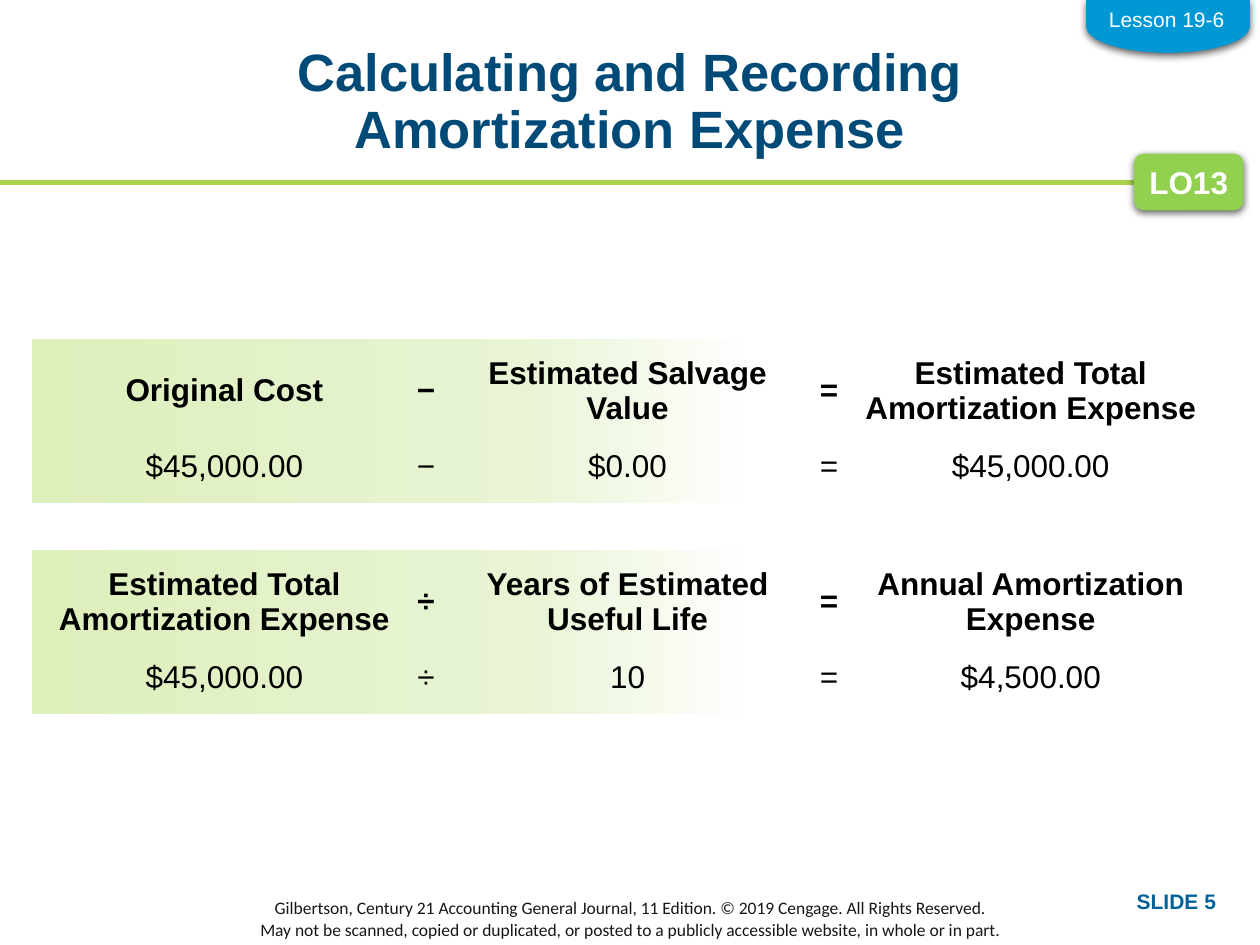
from lxml.etree import SubElement
from pptx import Presentation
from pptx.dml.color import RGBColor
from pptx.enum.shapes import MSO_CONNECTOR, MSO_SHAPE
from pptx.enum.text import MSO_ANCHOR, PP_ALIGN
from pptx.oxml.ns import qn
from pptx.util import Pt

NAVY = RGBColor(0x00, 0x4A, 0x78)
BLUE = RGBColor(0x00, 0x61, 0x98)
SKY = RGBColor(0x00, 0x98, 0xD4)
RULE_GREEN = RGBColor(0xAA, 0xD2, 0x4B)
BADGE_GREEN = RGBColor(0x92, 0xD0, 0x50)
BLACK = RGBColor(0x00, 0x00, 0x00)
INK = RGBColor(0x18, 0x17, 0x17)
WHITE = RGBColor(0xFF, 0xFF, 0xFF)
PANEL_STOPS = [
    (0, RGBColor(0xDD, 0xEF, 0xBB)),
    (50, RGBColor(0xE8, 0xF4, 0xD4)),
    (74, WHITE),
]

TITLE = "Calculating and Recording\vAmortization Expense"
LESSON = "Lesson 19-6"
OBJECTIVE = "LO13"
SLIDE_LABEL = "SLIDE 5"
COPYRIGHT = (
    "Gilbertson, Century 21 Accounting General Journal, 11 Edition. "
    "© 2019 Cengage. All Rights Reserved.\n"
    "May not be scanned, copied or duplicated, or posted to a publicly "
    "accessible website, in whole or in part."
)
# Each calculation: terms in words, then the amounts
CALCULATIONS = [
    (
        ["Original Cost", "−", "Estimated Salvage\vValue", "=",
         "Estimated Total\vAmortization Expense"],
        ["$45,000.00", "−", "$0.00", "=", "$45,000.00"],
    ),
    (
        ["Estimated Total\vAmortization Expense", "÷",
         "Years of Estimated\vUseful Life", "=",
         "Annual Amortization\vExpense"],
        ["$45,000.00", "÷", "10", "=", "$4,500.00"],
    ),
]

PANEL_LEFT, PANEL_TOP, PANEL_WIDTH, PANEL_HEIGHT = 18, 193.7, 558, 93.6
PANEL_STEP = 120.6
TABLE_LEFT, TABLE_INSET = 20.2, 4
COLUMN_WIDTHS = [216, 14.4, 216, 14.4, 216]
TERMS_HEIGHT, AMOUNTS_HEIGHT = 50.4, 36
NO_STYLE_NO_GRID = "{2D5ABB26-0587-4C30-8999-92F81FD0307C}"


def box(left, top, width, height):
    return Pt(left), Pt(top), Pt(width), Pt(height)


def style_text(frame, size, color, bold=False, align=PP_ALIGN.CENTER, font="Arial"):
    for paragraph in frame.paragraphs:
        paragraph.alignment = align
        for run in paragraph.runs:
            run.font.name = font
            run.font.size = Pt(size)
            run.font.bold = bold
            run.font.color.rgb = color


def add_label(slide, place, text, size, color, wrap=True, **style):
    frame = slide.shapes.add_textbox(*box(*place)).text_frame
    frame.word_wrap = wrap
    frame.text = text
    style_text(frame, size, color, **style)
    return frame


def add_plain_shape(slide, kind, place):
    shape = slide.shapes.add_shape(kind, *box(*place))
    shape.shadow.inherit = False
    shape.line.fill.background()
    return shape


def add_tab(slide, kind, place, color):
    """Solid shape with a soft shadow below it."""
    tab = add_plain_shape(slide, kind, place)
    tab.fill.solid()
    tab.fill.fore_color.rgb = color
    effects = tab._element.spPr.find(qn("a:effectLst"))
    shadow = SubElement(effects, qn("a:outerShdw"), blurRad=str(Pt(4.5)),
                        dist=str(Pt(1.5)), dir="5400000", rotWithShape="0")
    tint = SubElement(shadow, qn("a:srgbClr"), val=str(BLACK))
    SubElement(tint, qn("a:alpha"), val="63000")
    return tab


def add_panel(slide, top):
    panel = add_plain_shape(slide, MSO_SHAPE.RECTANGLE,
                            (PANEL_LEFT, top, PANEL_WIDTH, PANEL_HEIGHT))
    panel.fill.gradient()
    panel.fill.gradient_angle = 0
    stops = panel._element.spPr.find(".//" + qn("a:gsLst"))
    for stop in list(stops):
        stops.remove(stop)
    for percent, color in PANEL_STOPS:
        stop = SubElement(stops, qn("a:gs"), pos=str(percent * 1000))
        SubElement(stop, qn("a:srgbClr"), val=str(color))


def add_row_table(slide, texts, top, height, bold):
    place = box(TABLE_LEFT, top, sum(COLUMN_WIDTHS), height)
    table = slide.shapes.add_table(1, len(texts), *place).table
    table.first_row = table.horz_banding = False
    table._tbl.tblPr.find(qn("a:tableStyleId")).text = NO_STYLE_NO_GRID
    for column, width in zip(table.columns, COLUMN_WIDTHS):
        column.width = Pt(width)
    for cell, text in zip(table.rows[0].cells, texts):
        cell.fill.background()
        cell.vertical_anchor = MSO_ANCHOR.MIDDLE
        cell.margin_left = cell.margin_right = cell.margin_top = Pt(0.72)
        cell.margin_bottom = 0
        cell.text_frame.text = text
        style_text(cell.text_frame, 18, BLACK, bold=bold)


def add_title(slide):
    title = slide.shapes.title
    title.left, title.top, title.width, title.height = box(49.7, 30.2, 620.6, 57.6)
    frame = title.text_frame
    frame.margin_left = frame.margin_right = 0
    frame.margin_top = frame.margin_bottom = 0
    frame.vertical_anchor = MSO_ANCHOR.MIDDLE
    frame.text = TITLE
    frame.paragraphs[0].line_spacing = 0.9
    style_text(frame, 30, NAVY, bold=True)


def main():
    deck = Presentation()
    deck.slide_width, deck.slide_height = Pt(720), Pt(540)
    slide = deck.slides.add_slide(deck.slide_layouts[5])

    rule = slide.shapes.add_connector(MSO_CONNECTOR.STRAIGHT,
                                      Pt(0), Pt(104.4), Pt(684), Pt(104.4))
    rule.line.color.rgb = RULE_GREEN
    rule.line.width = Pt(3)
    SubElement(rule._element.spPr, qn("a:effectLst"))

    footer = add_label(slide, (0, 514.1, 720, 21.6), COPYRIGHT, 10, INK, font="Calibri")
    footer.vertical_anchor = MSO_ANCHOR.MIDDLE
    add_title(slide)

    for index, (terms, amounts) in enumerate(CALCULATIONS):
        panel_top = PANEL_TOP + index * PANEL_STEP
        terms_top = panel_top + TABLE_INSET
        add_panel(slide, panel_top)
        add_row_table(slide, terms, terms_top, TERMS_HEIGHT, bold=True)
        add_row_table(slide, amounts, terms_top + TERMS_HEIGHT, AMOUNTS_HEIGHT, bold=False)

    badge = add_tab(slide, MSO_SHAPE.ROUNDED_RECTANGLE, (648, 87.8, 62.6, 32.4), BADGE_GREEN)
    badge.text_frame.word_wrap = False
    badge.text_frame.text = OBJECTIVE
    style_text(badge.text_frame, 18, WHITE, bold=True)

    add_label(slide, (558, 504, 144, 21.6), SLIDE_LABEL, 12, BLUE,
              bold=True, align=PP_ALIGN.RIGHT)

    lesson_tab = add_tab(slide, MSO_SHAPE.FLOWCHART_DELAY, (652.3, -31.7, 30.2, 93.6), SKY)
    lesson_tab.rotation = 90
    add_label(slide, (626.4, 0, 80.6, 21.6), LESSON, 12, WHITE, wrap=False)

    deck.save("out.pptx")


if __name__ == "__main__":
    main()
